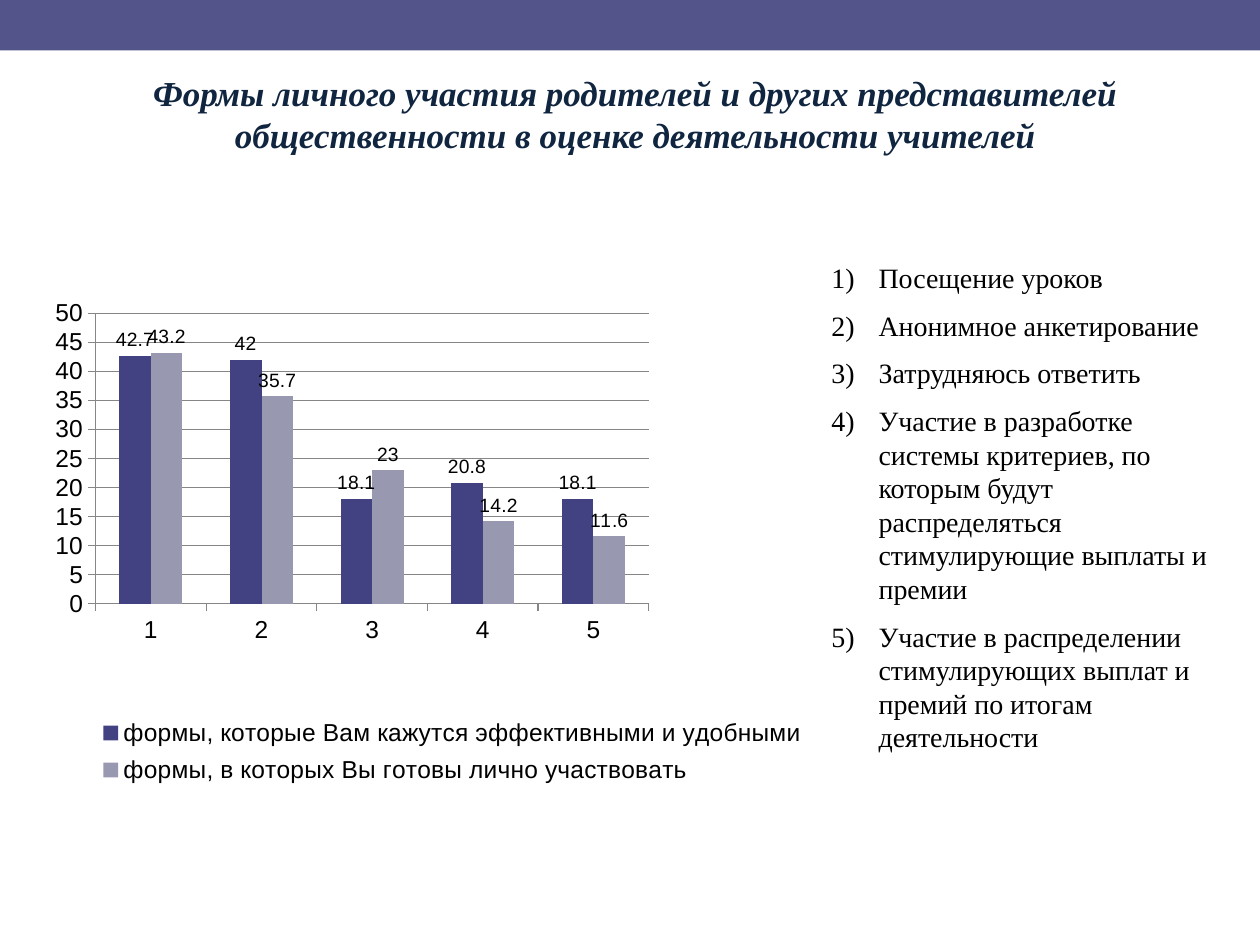
from dataclasses import dataclass

from lxml.etree import SubElement
from pptx import Presentation
from pptx.chart.data import CategoryChartData
from pptx.dml.color import RGBColor
from pptx.enum.chart import XL_CHART_TYPE, XL_LABEL_POSITION, XL_LEGEND_POSITION, XL_TICK_MARK
from pptx.enum.shapes import MSO_SHAPE
from pptx.enum.text import PP_ALIGN
from pptx.oxml import parse_xml
from pptx.oxml.ns import nsdecls, qn
from pptx.util import Pt


@dataclass(frozen=True)
class Theme:
    band: RGBColor = RGBColor(0x53, 0x54, 0x8A)
    title: RGBColor = RGBColor(0x10, 0x25, 0x3F)
    text: RGBColor = RGBColor(0, 0, 0)
    grid: RGBColor = RGBColor(0x86, 0x86, 0x86)
    effective: RGBColor = RGBColor(0x42, 0x42, 0x82)
    willing: RGBColor = RGBColor(0x98, 0x98, 0xB0)
    text_font: str = "Times New Roman"
    chart_font: str = "Arial"
    title_size: int = 20
    list_size: int = 16
    chart_size: int = 14
    label_size: int = 11


THEME = Theme()

TITLE = ("Формы личного участия родителей и других представителей "
         "общественности в оценке деятельности учителей")

FORMS = [
    "Посещение уроков",
    "Анонимное анкетирование",
    "Затрудняюсь ответить",
    "Участие в разработке системы критериев, по которым будут распределяться "
    "стимулирующие выплаты и премии",
    "Участие в распределении стимулирующих выплат и премий по итогам деятельности",
]

SERIES = [
    ("формы, которые Вам кажутся эффективными и удобными",
     (42.7, 42, 18.1, 20.8, 18.1), THEME.effective),
    ("формы, в которых Вы готовы лично участвовать",
     (43.2, 35.7, 23, 14.2, 11.6), THEME.willing),
]


def add_band(page, width, height):
    band = page.shapes.add_shape(MSO_SHAPE.RECTANGLE, 0, 0, width, height)
    band.shadow.inherit = False
    band.fill.solid()
    band.fill.fore_color.rgb = THEME.band
    band.line.fill.background()


def add_text_frame(page, left, top, width, height):
    box = page.shapes.add_textbox(Pt(left), Pt(top), Pt(width), Pt(height))
    box.text_frame.word_wrap = True
    return box.text_frame


def style_font(font, name, size, color):
    font.name = name
    font.size = Pt(size)
    font.color.rgb = color


def add_title(page):
    para = add_text_frame(page, 54, 37.5, 618, 55.5).paragraphs[0]
    para.text = TITLE
    para.alignment = PP_ALIGN.CENTER
    style_font(para.font, THEME.text_font, THEME.title_size, THEME.title)
    para.font.bold = para.font.italic = True


def add_numbered_list(page):
    frame = add_text_frame(page, 468, 145.5, 244, 298)
    for index, form in enumerate(FORMS):
        para = frame.add_paragraph() if index else frame.paragraphs[0]
        para.text = form
        para.space_after = Pt(THEME.list_size / 2)
        style_font(para.font, THEME.text_font, THEME.list_size, THEME.text)
        properties = para._p.get_or_add_pPr()
        properties.set("marL", str(Pt(27)))
        properties.set("indent", str(-Pt(27)))
        SubElement(properties, qn("a:buFont"), typeface=THEME.text_font)
        SubElement(properties, qn("a:buAutoNum"), type="arabicParenR")


def set_layout(parent, position, left, top, width, height, target=""):
    for old in parent.findall(qn("c:layout")):
        parent.remove(old)
    parent.insert(position, parse_xml(
        f'<c:layout {nsdecls("c")}><c:manualLayout>{target}'
        '<c:xMode val="edge"/><c:yMode val="edge"/>'
        f'<c:x val="{left}"/><c:y val="{top}"/><c:w val="{width}"/><c:h val="{height}"/>'
        '</c:manualLayout></c:layout>'))


def style_axes(chart):
    for axis in (chart.category_axis, chart.value_axis):
        axis.major_tick_mark = XL_TICK_MARK.OUTSIDE
        axis.minor_tick_mark = XL_TICK_MARK.NONE
        axis.format.line.color.rgb = THEME.grid
    axis = chart.value_axis
    axis.minimum_scale, axis.maximum_scale, axis.major_unit = 0, 50, 5
    axis.has_major_gridlines = True
    axis.major_gridlines.format.line.color.rgb = THEME.grid


def style_series(series, color):
    series.format.fill.solid()
    series.format.fill.fore_color.rgb = color
    labels = series.data_labels
    labels.show_value = True
    labels.position = XL_LABEL_POSITION.OUTSIDE_END
    style_font(labels.font, THEME.chart_font, THEME.label_size, THEME.text)


def add_forms_chart(page):
    data = CategoryChartData()
    data.categories = [str(number) for number in range(1, len(FORMS) + 1)]
    for name, values, _ in SERIES:
        data.add_series(name, values)
    chart = page.shapes.add_chart(
        XL_CHART_TYPE.COLUMN_CLUSTERED, Pt(24), Pt(144), Pt(510), Pt(319), data).chart
    style_font(chart.font, THEME.chart_font, THEME.chart_size, THEME.text)
    chart.has_title = False
    style_axes(chart)
    plot = chart.plots[0]
    plot.gap_width = 150
    plot.overlap = 0
    plot.vary_by_categories = False
    for series, (_, _, color) in zip(plot.series, SERIES):
        style_series(series, color)
    chart.has_legend = True
    legend = chart.legend
    legend.position = XL_LEGEND_POSITION.BOTTOM
    legend.include_in_layout = False
    set_layout(legend._element, 1, 0.06, 0.82, 0.8, 0.15)
    plot_area = chart._chartSpace.chart.plotArea
    set_layout(plot_area, 0, 0.06, 0.11, 0.62, 0.52, '<c:layoutTarget val="inner"/>')


def main():
    deck = Presentation()
    deck.slide_width, deck.slide_height = Pt(720), Pt(540)
    page = deck.slides.add_slide(deck.slide_layouts[6])
    add_band(page, deck.slide_width, Pt(28.8))
    add_title(page)
    add_forms_chart(page)
    add_numbered_list(page)
    deck.save("out.pptx")


if __name__ == "__main__":
    main()
